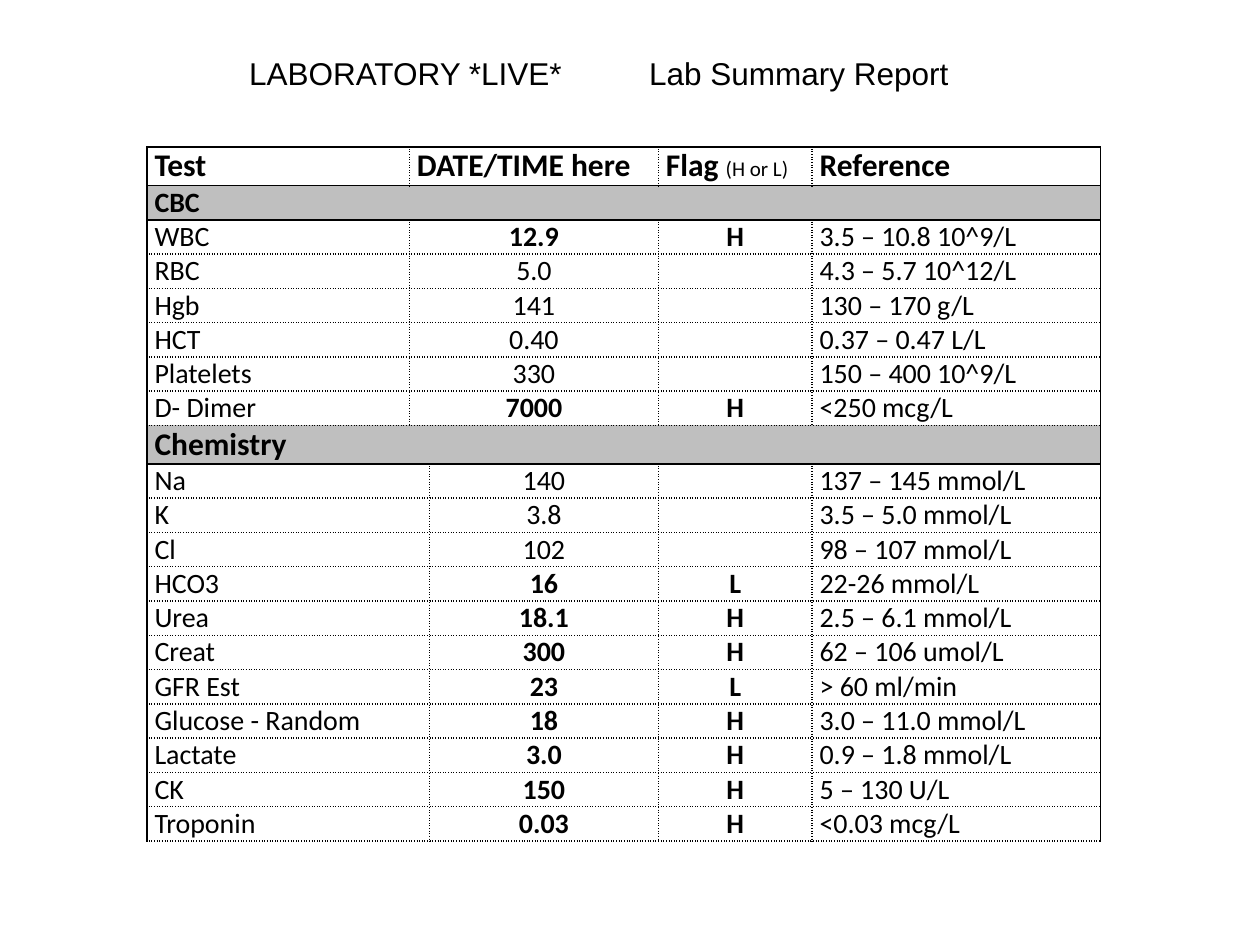
from dataclasses import dataclass

from lxml import etree
from pptx import Presentation
from pptx import util as u
from pptx.dml.color import RGBColor
from pptx.enum import text
from pptx.oxml.ns import qn


@dataclass(frozen=True)
class Theme:
    ink: str = "000000"
    paper: str = "FFFFFF"
    band: str = "BFBFBF"
    title_font: str = "Arial"
    table_font: str = "Calibri"
    large: int = 18
    normal: int = 16
    small: int = 12
    line: float = 1


THEME = Theme()
COLUMNS, ROWS = 60, 45  # square grid cells on a 10 x 7.5 inch slide
TABLE_COLUMNS = (12.5, 0.54, 10.9, 7.32, 13.74)
LARGE_ROW, NORMAL_ROW = 1.8, 1.6

# Where each visible cell starts among the five table columns
NARROW_NAME, WIDE_NAME, FULL_WIDTH = (0, 1, 3, 4), (0, 2, 3, 4), (0,)

CBC = [
    ("WBC", "12.9", "H", "3.5 – 10.8 10^9/L"),
    ("RBC", "5.0", "", "4.3 – 5.7 10^12/L"),
    ("Hgb", "141", "", "130 – 170 g/L"),
    ("HCT", "0.40", "", "0.37 – 0.47 L/L"),
    ("Platelets", "330", "", "150 – 400 10^9/L"),
    ("D- Dimer", "7000", "H", "<250 mcg/L"),
]
CHEMISTRY = [
    ("Na", "140", "", "137 – 145 mmol/L"),
    ("K", "3.8", "", "3.5 – 5.0 mmol/L"),
    ("Cl", "102", "", "98 – 107 mmol/L"),
    ("HCO3", "16", "L", "22-26 mmol/L"),
    ("Urea", "18.1", "H", "2.5 – 6.1 mmol/L"),
    ("Creat", "300", "H", "62 – 106 umol/L"),
    ("GFR Est", "23", "L", "> 60 ml/min"),
    ("Glucose - Random", "18", "H", "3.0 – 11.0 mmol/L"),
    ("Lactate", "3.0", "H", "0.9 – 1.8 mmol/L"),
    ("CK", "150", "H", "5 – 130 U/L"),
    ("Troponin", "0.03", "H", "<0.03 mcg/L"),
]


@dataclass(frozen=True)
class Row:
    texts: tuple
    starts: tuple
    size: int = THEME.normal
    fill: str = ""

    @property
    def is_heading(self):
        return bool(self.fill)


def grid(cells):
    return u.Inches(round(cells * 10 / COLUMNS, 4))


def write(para, words, *, font=THEME.table_font, size=THEME.normal, bold=False,
          align=text.PP_ALIGN.LEFT):
    para.alignment = align
    span = para.add_run()
    span.text = words
    span.font.name, span.font.size, span.font.bold = font, u.Pt(size), bold
    span.font.color.rgb = RGBColor.from_string(THEME.ink)


def add_title(page):
    box = page.shapes.title
    box.left, box.top, box.width, box.height = map(grid, (9, 2.28, 39, 2.4))
    frame = box.text_frame
    frame.margin_left = grid(2.86)
    frame.vertical_anchor = text.MSO_ANCHOR.TOP
    frame.auto_size = text.MSO_AUTO_SIZE.NONE
    para = frame.paragraphs[0]
    stops = etree.SubElement(para._p.get_or_add_pPr(), qn("a:tabLst"))
    etree.SubElement(stops, qn("a:tab"), pos=str(grid(19.05)), algn="l")
    write(para, "LABORATORY *LIVE*\tLab Summary Report",
          font=THEME.title_font, size=THEME.large)


def draw_borders(cell, **solid):
    """Draw each named side solid when its value is true, dotted otherwise."""
    properties = cell._tc.get_or_add_tcPr()
    for side in "LRTB":
        line = etree.SubElement(properties, qn(f"a:ln{side}"),
                                w=str(u.Pt(THEME.line)))
        paint = etree.SubElement(line, qn("a:solidFill"))
        etree.SubElement(paint, qn("a:srgbClr"), val=THEME.ink)
        etree.SubElement(line, qn("a:prstDash"),
                         val="solid" if solid[side] else "sysDot")


def paint_cell(cell, color):
    if color:
        cell.fill.solid()
        cell.fill.fore_color.rgb = RGBColor.from_string(color)
    else:
        cell.fill.background()


def set_empty_size(cell, size):
    """Keep an empty cell from making its row taller than the text does."""
    etree.SubElement(cell.text_frame.paragraphs[0]._p, qn("a:endParaRPr"),
                     sz=str(size * 100))


def write_cell(cell, row, position):
    words = row.texts[position]
    para = cell.text_frame.paragraphs[0]
    if row.is_heading:
        label, bracket, note = words.partition("(")
        write(para, label, size=row.size, bold=True)
        if note:
            write(para, bracket + note, size=THEME.small)
    elif words:
        centred = position in (1, 2)
        write(para, words, size=row.size, bold=centred and bool(row.texts[2]),
              align=text.PP_ALIGN.CENTER if centred else text.PP_ALIGN.LEFT)
    if not words:
        set_empty_size(cell, row.size)


def fill_row(table, index, row, *, below_heading):
    last = len(TABLE_COLUMNS) - 1
    table.rows[index].height = grid(
        LARGE_ROW if row.size == THEME.large else NORMAL_ROW)
    ends = [start - 1 for start in row.starts[1:]] + [last]
    for position, (start, end) in enumerate(zip(row.starts, ends)):
        cell = table.cell(index, start)
        for column in range(start + 1, end + 1):
            set_empty_size(table.cell(index, column), row.size)
        if end > start:
            cell.merge(table.cell(index, end))
        cell.margin_left = cell.margin_right = u.Inches(0.06)
        cell.margin_top = cell.margin_bottom = 0
        write_cell(cell, row, position)
        draw_borders(cell, L=start == 0, R=end == last,
                     T=below_heading, B=row.is_heading)
        paint_cell(cell, row.fill)


def add_results(page):
    rows = [
        Row(("Test", "DATE/TIME here", "Flag (H or L)", "Reference"),
            NARROW_NAME, THEME.large, THEME.paper),
        Row(("CBC",), FULL_WIDTH, THEME.normal, THEME.band),
        *(Row(result, NARROW_NAME) for result in CBC),
        Row(("Chemistry",), FULL_WIDTH, THEME.large, THEME.band),
        *(Row(result, WIDE_NAME) for result in CHEMISTRY),
    ]
    frame = page.shapes.add_table(len(rows), len(TABLE_COLUMNS),
                                  *map(grid, (7, 7, 45, 32.4)))
    table = frame.table
    table.first_row = table.horz_banding = False
    for column, width in zip(table.columns, TABLE_COLUMNS):
        column.width = grid(width)
    for index, row in enumerate(rows):
        fill_row(table, index, row,
                 below_heading=index == 0 or rows[index - 1].is_heading)


def main():
    deck = Presentation()
    deck.slide_width, deck.slide_height = grid(COLUMNS), grid(ROWS)
    page = deck.slides.add_slide(deck.slide_layouts.get_by_name("Title Only"))
    add_title(page)
    add_results(page)
    deck.save("out.pptx")


if __name__ == "__main__":
    main()
